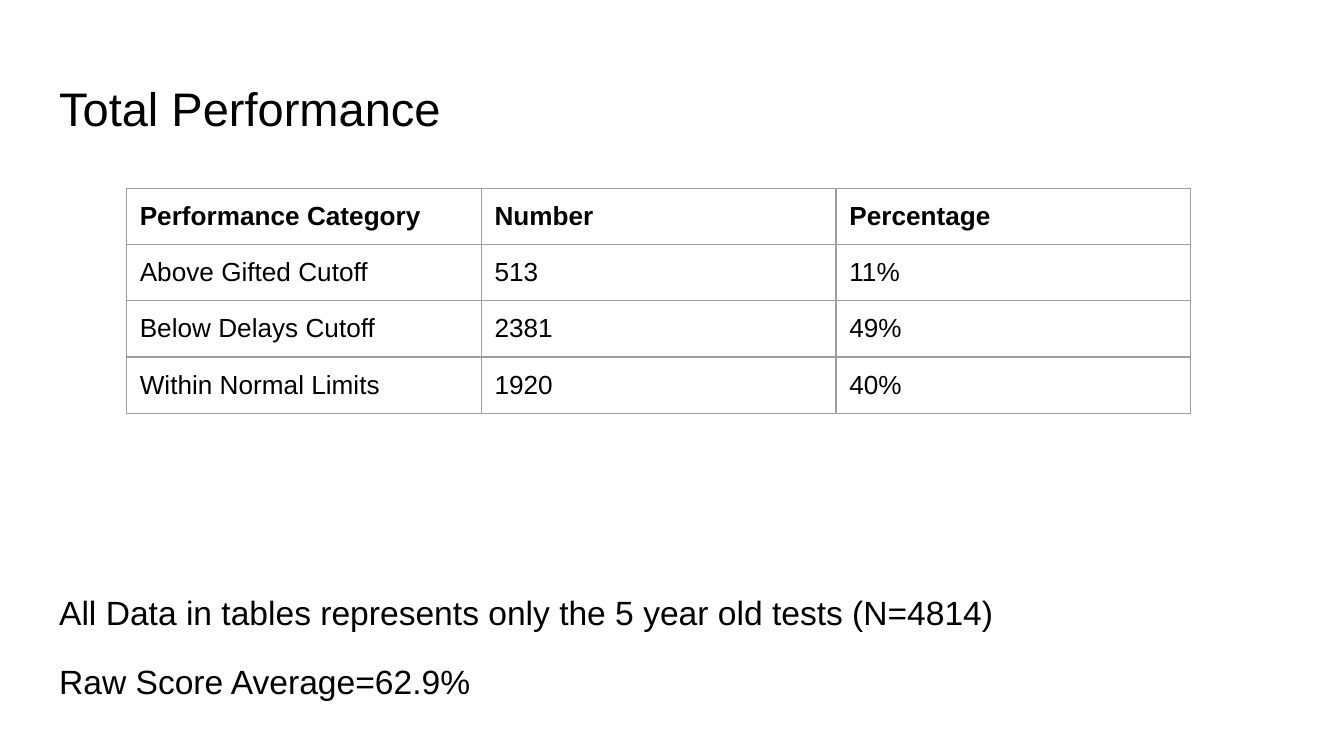
from lxml import etree
from pptx import Presentation
from pptx.dml.color import RGBColor
from pptx.enum.text import MSO_ANCHOR, MSO_AUTO_SIZE, PP_ALIGN
from pptx.oxml.ns import qn
from pptx.util import Inches, Pt

TOP, MIDDLE = MSO_ANCHOR.TOP, MSO_ANCHOR.MIDDLE
FIXED = MSO_AUTO_SIZE.NONE
LEFT = PP_ALIGN.LEFT
BLACK = RGBColor(0x00, 0x00, 0x00)
GREY = RGBColor(0x9E, 0x9E, 0x9E)
FONT = "Arial"
PAD = Inches(0.1)
SIDES = ("a:lnL", "a:lnR", "a:lnT", "a:lnB")

ROWS = [
    ("Performance Category", "Number", "Percentage"),
    ("Above Gifted Cutoff", "513", "11%"),
    ("Below Delays Cutoff", "2381", "49%"),
    ("Within Normal Limits", "1920", "40%"),
]
NOTES = [
    "All Data in tables represents only the 5 year old tests (N=4814)",
    "Raw Score Average=62.9%",
]


def add_run(para, text, size, bold=False):
    run = para.add_run()
    run.text = text
    font = run.font
    font.name, font.size, font.bold = FONT, Pt(size), bold
    font.color.rgb = BLACK


def set_pad(item):
    item.margin_left = item.margin_right = PAD
    item.margin_top = item.margin_bottom = PAD


def place(holder, box, anchor):
    holder.left, holder.top, holder.width, holder.height = map(Inches, box)
    frame = holder.text_frame
    frame.word_wrap = True
    frame.auto_size = FIXED
    frame.vertical_anchor = anchor
    set_pad(frame)
    return frame


def add_title(holder, box):
    para = place(holder, box, MIDDLE).paragraphs[0]
    para.alignment = LEFT
    add_run(para, "Total Performance", 25.2)


def add_notes(holder, box):
    frame = place(holder, box, TOP)
    for i, text in enumerate(NOTES):
        para = frame.add_paragraph() if i else frame.paragraphs[0]
        para.line_spacing = 1.15
        para.space_before = para.space_after = Pt(12 if i else 0)
        props = para._p.get_or_add_pPr()
        props.set("marL", "0")
        props.set("indent", "0")
        etree.SubElement(props, qn("a:buNone"))
        add_run(para, text, 18)


def add_edges(cell):
    props = cell._tc.get_or_add_tcPr()
    for i, side in enumerate(SIDES):
        line = etree.Element(qn(side), w=str(Pt(0.75)))
        fill = etree.SubElement(line, qn("a:solidFill"))
        etree.SubElement(fill, qn("a:srgbClr"), val=str(GREY))
        props.insert(i, line)


def add_scores(slide, box):
    left, top, width, height = map(Inches, box)
    count = len(ROWS[0])
    table = slide.shapes.add_table(
        len(ROWS), count, left, top, width, height).table
    table.first_row = table.horz_banding = False
    for r, row in enumerate(ROWS):
        for c, text in enumerate(row):
            cell = table.cell(r, c)
            cell.fill.background()
            set_pad(cell)
            add_edges(cell)
            add_run(cell.text_frame.paragraphs[0], text, 14, r == 0)


def main():
    deck = Presentation()
    deck.slide_width, deck.slide_height = Inches(10), Inches(10 * 9 / 16)
    slide = deck.slides.add_slide(deck.slide_layouts[1])
    add_title(slide.shapes.title, (0.34, 0.49, 9.32, 0.63))
    add_notes(slide.placeholders[1], (0.34, 4.26, 9.32, 1.23))
    add_scores(slide, (0.94, 1.4, 7.92, 1.67))
    deck.save("out.pptx")


if __name__ == "__main__":
    main()
